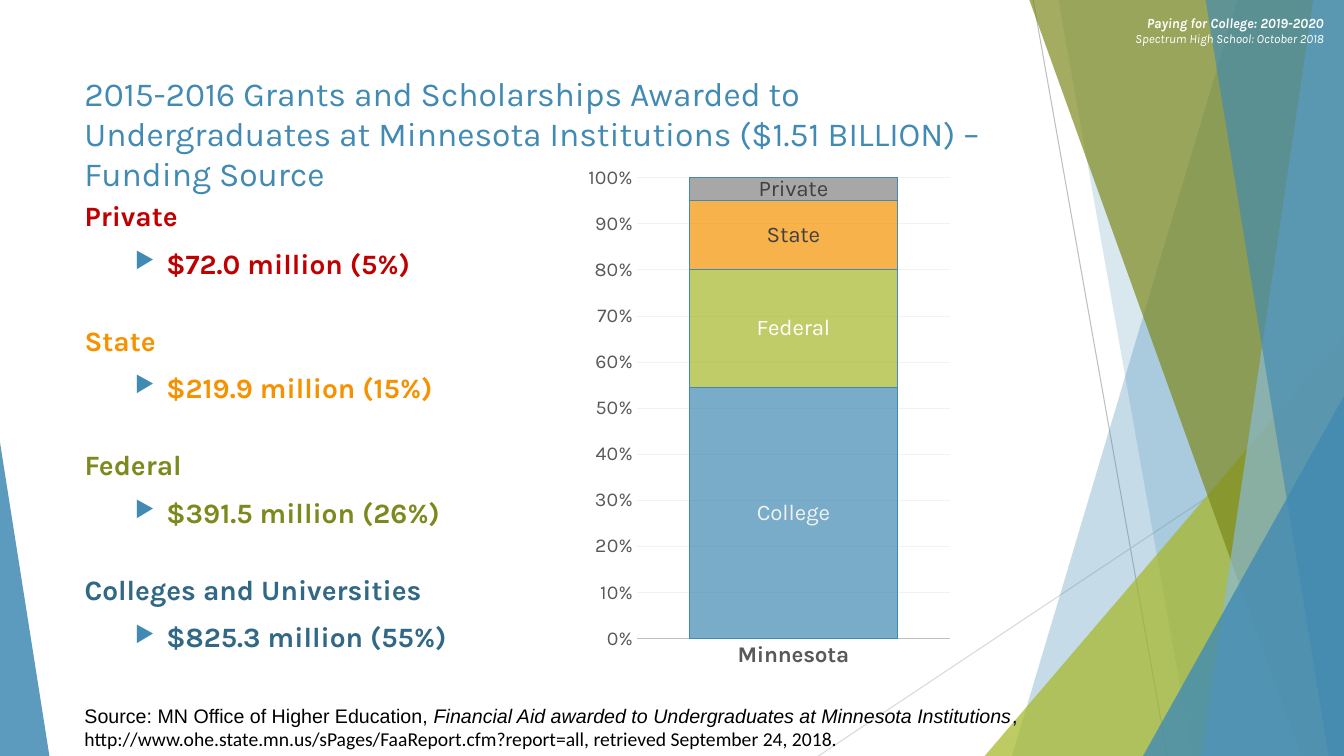
from lxml.etree import SubElement
from pptx import Presentation
from pptx.chart.data import CategoryChartData
from pptx.dml.color import RGBColor
from pptx.enum.chart import XL_CHART_TYPE, XL_LABEL_POSITION, XL_TICK_MARK
from pptx.enum.shapes import MSO_CONNECTOR, MSO_SHAPE
from pptx.enum.text import PP_ALIGN
from pptx.oxml.ns import qn
from pptx.util import Pt

BLUE = RGBColor(0x41, 0x8A, 0xB3)
PALE_BLUE = RGBColor(0x8A, 0xBA, 0xD4)
DARK_BLUE = RGBColor(0x31, 0x68, 0x86)
LIME = RGBColor(0xA6, 0xB7, 0x27)
OLIVE = RGBColor(0x7D, 0x89, 0x1D)
ORANGE = RGBColor(0xF6, 0x92, 0x00)
RED = RGBColor(0xC0, 0x00, 0x00)
GRAY = RGBColor(0x83, 0x83, 0x83)
CHARCOAL = RGBColor(0x40, 0x40, 0x40)
AXIS_GRAY = RGBColor(0x59, 0x59, 0x59)
LINE_GRAY = RGBColor(0xBF, 0xBF, 0xBF)
LIGHT_GRAY = RGBColor(0xD9, 0xD9, 0xD9)
GRID_GRAY = RGBColor(0xF2, 0xF2, 0xF2)
WHITE = RGBColor(0xFF, 0xFF, 0xFF)
BLACK = RGBColor(0x00, 0x00, 0x00)

WIDTH, HEIGHT = 960, 540
TOP = -0.6

deck = Presentation()
deck.slide_width, deck.slide_height = Pt(WIDTH), Pt(HEIGHT)
slide = deck.slides.add_slide(deck.slide_layouts[6])
shapes = slide.shapes


def fill_translucent(target, element, color, opacity):
    target.fill.solid()
    target.fill.fore_color.rgb = color
    rgb = element.find(".//" + qn("a:solidFill") + "/" + qn("a:srgbClr"))
    SubElement(rgb, qn("a:alpha")).set("val", str(opacity * 1000))


def add_text(left, top, width, height):
    frame = shapes.add_textbox(Pt(left), Pt(top), Pt(width), Pt(height)).text_frame
    frame.word_wrap = True
    return frame


for x1, y1, x2, y2, color in [
    (738, 0, 833.8, HEIGHT, LINE_GRAY),
    (WIDTH, 290.2, 584.6, HEIGHT, LIGHT_GRAY),
]:
    ray = shapes.add_connector(MSO_CONNECTOR.STRAIGHT, Pt(x1), Pt(y1), Pt(x2), Pt(y2))
    ray.line.color.rgb = color
    ray.line.width = Pt(0.75)
    SubElement(ray.element.spPr, qn("a:effectLst"))

facets = [
    ("band", 884.2, 722.9, BLUE, 30),
    ("band", 756, 851.8, BLUE, 20),
    ("triangle", (703.4, 239.8, 256.6, 300.2), 1, LIME, 72),
    ("band", 735.1, 929.5, OLIVE, 70),
    ("band", 938.2, 858.2, PALE_BLUE, 70),
    ("band", 861.1, 949, BLUE, 65),
    ("triangle", (816.5, 283, 143.5, 257), 1, BLUE, 80),
    ("triangle", (0, 316, 35.3, 224), 0, BLUE, 85),
]
for kind, start, end, color, opacity in facets:
    if kind == "band":
        outline = shapes.build_freeform(Pt(start), Pt(TOP))
        corners = [(WIDTH, TOP), (WIDTH, HEIGHT), (end, HEIGHT)]
        outline.add_line_segments([(Pt(x), Pt(y)) for x, y in corners], close=True)
        facet = outline.convert_to_shape()
    else:
        facet = shapes.add_shape(MSO_SHAPE.ISOSCELES_TRIANGLE, *map(Pt, start))
        facet.adjustments[0] = end
    facet.shadow.inherit = False
    facet.line.fill.background()
    fill_translucent(facet, facet.element.spPr, color, opacity)

header = add_text(748.1, 6.5, 204.5, 30.2)
event = header.paragraphs[0]
event.text = "Paying for College: 2019-2020"
school = header.add_paragraph()
school.text = "Spectrum High School: October 2018"
for line, size, bold in [(event, 10, True), (school, 9, False)]:
    line.alignment = PP_ALIGN.RIGHT
    line.font.name = "Karla"
    line.font.size = Pt(size)
    line.font.bold = bold
    line.font.italic = True
    line.font.color.rgb = WHITE

title = add_text(53.3, 48.2, 695.5, 75.6).paragraphs[0]
title.text = (
    "2015-2016 Grants and Scholarships Awarded to Undergraduates at "
    "Minnesota Institutions ($1.51 BILLION) – Funding Source"
)
title.font.name = "Karla"
title.font.size = Pt(24)
title.font.color.rgb = BLUE

funding = add_text(53.3, 138.2, 315.4, 355.7)
sources = [
    ("Private", "$72.0 million (5%)", RED),
    ("State", "$219.9 million (15%)", ORANGE),
    ("Federal", "$391.5 million (26%)", OLIVE),
    ("Colleges and Universities", "$825.3 million (55%)", DARK_BLUE),
]
for index, (source, amount, color) in enumerate(sources):
    if index == 0:
        heading = funding.paragraphs[0]
    else:
        heading = funding.add_paragraph()
        heading.space_before = Pt(31)
    heading.text = source
    award = funding.add_paragraph()
    award.text = amount
    award.level = 1
    award.space_before = Pt(10)
    props = award._p.get_or_add_pPr()
    props.set("marL", str(Pt(58.5)))
    props.set("indent", str(Pt(-22.5)))
    bullet_color = SubElement(props, qn("a:buClr"))
    SubElement(bullet_color, qn("a:srgbClr")).set("val", str(BLUE))
    SubElement(props, qn("a:buSzPct")).set("val", "80000")
    SubElement(props, qn("a:buChar")).set("char", "▶")
    for line in (heading, award):
        line.font.name = "Karla"
        line.font.size = Pt(20)
        line.font.bold = True
        line.font.color.rgb = color

shares = [
    ("Colleges", "College", 55, BLUE, GRID_GRAY),
    ("Federal", "Federal", 26, LIME, WHITE),
    ("State", "State", 15, ORANGE, CHARCOAL),
    ("Private", "Private", 5, GRAY, CHARCOAL),
]
share_data = CategoryChartData()
share_data.categories = ["Minnesota"]
for name, label, value, color, label_color in shares:
    share_data.add_series(name, [value])
chart = shapes.add_chart(
    XL_CHART_TYPE.COLUMN_STACKED_100, Pt(381.6), Pt(115.9), Pt(306), Pt(370.1), share_data
).chart
chart.has_title = False
chart.has_legend = False
chart.font.name = "Karla"
chart.font.size = Pt(10)
chart.font.color.rgb = BLACK

plot = chart.plots[0]
plot.gap_width = 50
plot.overlap = 100
plot.vary_by_categories = False
for series, (name, label, value, color, label_color) in zip(plot.series, shares):
    fill_translucent(series.format, series._element, color, 70)
    series.format.line.color.rgb = BLUE
    series.format.line.width = Pt(0.75)
    data_label = series.points[0].data_label
    caption = data_label.text_frame.paragraphs[0].add_run()
    caption.text = label
    caption.font.name = "Karla"
    caption.font.size = Pt(16)
    caption.font.color.rgb = label_color
    data_label.position = XL_LABEL_POSITION.CENTER

for axis, size, bold in [(chart.category_axis, 16, True), (chart.value_axis, 14, False)]:
    axis.major_tick_mark = XL_TICK_MARK.NONE
    axis.minor_tick_mark = XL_TICK_MARK.NONE
    labels = axis.tick_labels
    labels.font.name = "Karla"
    labels.font.size = Pt(size)
    labels.font.bold = bold
    labels.font.color.rgb = AXIS_GRAY
chart.category_axis.format.line.color.rgb = LINE_GRAY
chart.category_axis.format.line.width = Pt(0.75)
chart.value_axis.format.line.fill.background()
chart.value_axis.tick_labels.number_format = "0%"
chart.value_axis.tick_labels.number_format_is_linked = False
grid = chart.value_axis.major_gridlines.format.line
grid.color.rgb = GRID_GRAY
grid.width = Pt(0.75)

plot_area = chart._chartSpace.chart.plotArea
layout = plot_area.find(qn("c:layout"))
if layout is None:
    layout = SubElement(plot_area, qn("c:layout"))
    plot_area.insert(0, layout)
manual = SubElement(layout, qn("c:manualLayout"))
for tag, setting in [
    ("layoutTarget", "inner"), ("xMode", "edge"), ("yMode", "edge"),
    ("x", "0.24"), ("y", "0.03"), ("w", "0.73"), ("h", "0.89"),
]:
    SubElement(manual, qn("c:" + tag)).set("val", setting)

citation = add_text(53.3, 499, 835.2, 41)
report = citation.paragraphs[0]
for text, italic in [
    ("Source: MN Office of Higher Education, ", False),
    ("Financial Aid awarded to Undergraduates at Minnesota Institutions", True),
    (",", False),
]:
    part = report.add_run()
    part.text = text
    part.font.italic = italic
address = citation.add_paragraph()
address.text = (
    "http://www.ohe.state.mn.us/sPages/FaaReport.cfm?report=all, "
    "retrieved September 24, 2018."
)
for line, typeface in [(report, "Arial"), (address, "Calibri")]:
    line.font.name = typeface
    line.font.size = Pt(14)
    line.font.color.rgb = BLACK

deck.save("out.pptx")
